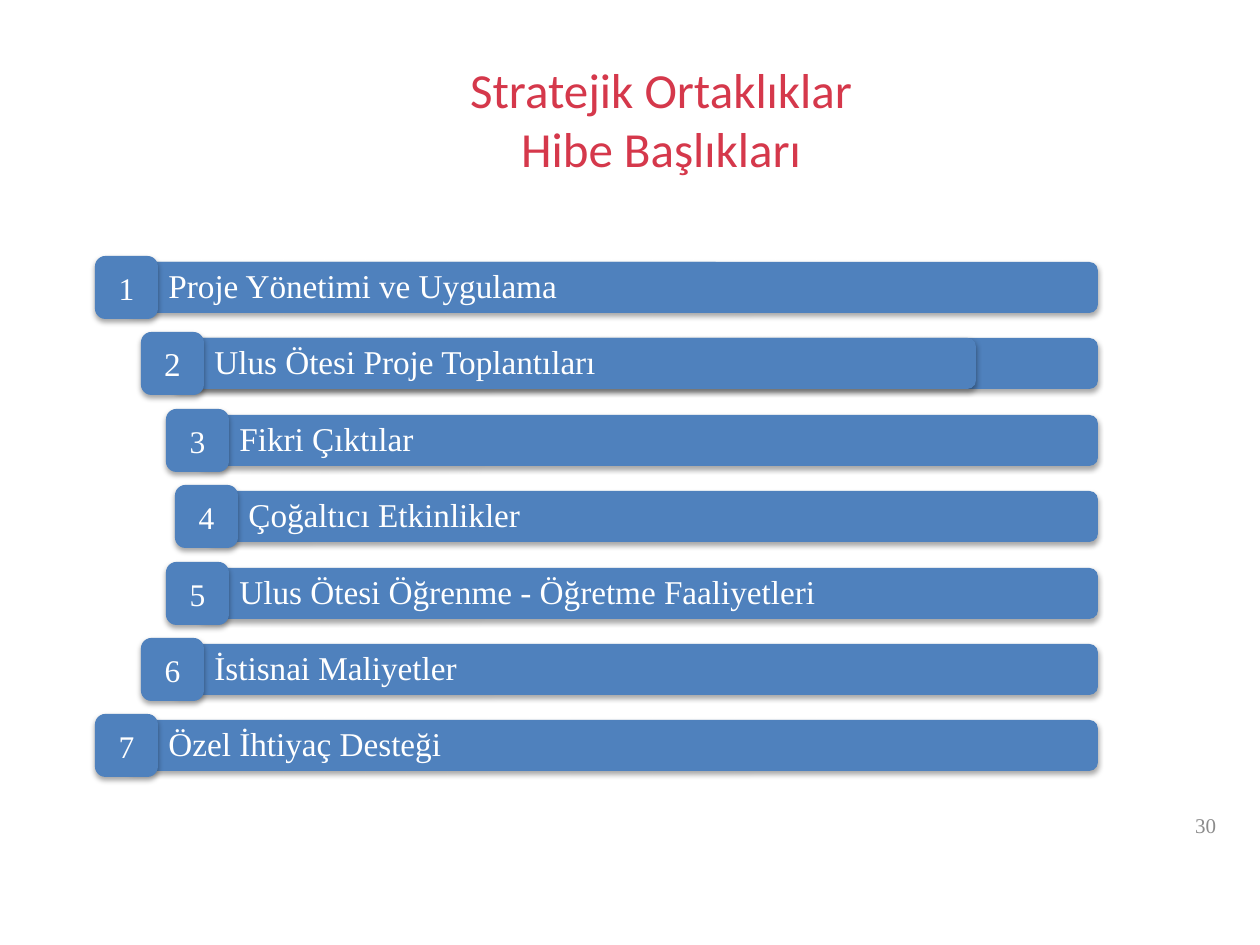
from lxml import etree
from pptx import Presentation
from pptx.dml.color import RGBColor
from pptx.enum.shapes import MSO_SHAPE
from pptx.enum.text import MSO_ANCHOR, PP_ALIGN
from pptx.oxml.ns import qn
from pptx.util import Pt

ROUND_RECT = MSO_SHAPE.ROUNDED_RECTANGLE
MIDDLE = MSO_ANCHOR.MIDDLE
LEFT, CENTER, RIGHT = PP_ALIGN.LEFT, PP_ALIGN.CENTER, PP_ALIGN.RIGHT

RED = RGBColor(0xD5, 0x38, 0x4B)
BLUE = RGBColor(0x4F, 0x81, 0xBD)
WHITE = RGBColor(0xFF, 0xFF, 0xFF)
GRAY = RGBColor(0x8C, 0x8C, 0x8C)
SERIF, SANS = "Times New Roman", "Calibri"

EMU_PER_PX = 914400 / 126


def px(n):
    return round(n * EMU_PER_PX)


def write(sp, text, size=19, font=SERIF, color=WHITE, align=LEFT,
          insets=(12, 6, 12, 6), spacing=None):
    tf = sp.text_frame
    tf.word_wrap = True
    tf.vertical_anchor = MIDDLE
    tf.margin_left, tf.margin_top, tf.margin_right, tf.margin_bottom = map(px, insets)
    tf.text = text
    p = tf.paragraphs[0]
    p.alignment = align
    p.line_spacing = spacing
    for r in p.runs:
        r.font.size = Pt(size)
        r.font.name = font
        r.font.color.rgb = color


class Deck:
    def __init__(self, prs):
        self.s = prs.slides.add_slide(prs.slide_layouts[5])

    def title(self, text, x, y, w, h):
        sp = self.s.shapes.title
        sp.left, sp.top, sp.width, sp.height = map(px, (x, y, w, h))
        write(sp, text, size=28, font=SANS, color=RED, align=CENTER)

    def text(self, text, x, y, w, h, **fmt):
        write(self.s.shapes.add_textbox(*map(px, (x, y, w, h))), text, **fmt)

    def box(self, x, y, w, h, shadow=True):
        sp = self.s.shapes.add_shape(ROUND_RECT, *map(px, (x, y, w, h)))
        sp.fill.solid()
        sp.fill.fore_color.rgb = BLUE
        sp.line.fill.background()
        sp.shadow.inherit = False
        if shadow:
            effects = sp._element.spPr.find(qn("a:effectLst"))
            outer = etree.SubElement(effects, qn("a:outerShdw"), blurRad="39370",
                                     dist="22860", dir="5400000", rotWithShape="0")
            black = etree.SubElement(outer, qn("a:srgbClr"), val="000000")
            etree.SubElement(black, qn("a:alpha"), val="35000")
        return sp

    def bar(self, text, x, y, w, h, shadow=True):
        write(self.box(x, y, w, h, shadow), text, insets=(40, 6, 6, 6), spacing=0.9)

    def badge(self, number, x, y, side, size):
        write(self.box(x, y, side, side), str(number), size=size, align=CENTER,
              insets=(0, 0, 0, 0))


# Bar geometry: left edges follow an arc, right edges align
TOP, PITCH, RIGHT_EDGE = 256, 76.4, 1098
BAR_H, BADGE = 51, 63
ARC = [126, 172, 197, 206, 197, 172, 126]
LABELS = [
    "Proje Yönetimi ve Uygulama",
    "Ulus Ötesi Proje Toplantıları",
    "Fikri Çıktılar",
    "Çoğaltıcı Etkinlikler",
    "Ulus Ötesi Öğrenme - Öğretme Faaliyetleri",
    "İstisnai Maliyetler",
    "Özel İhtiyaç Desteği",
]
# Rows whose label sits on a shorter bar: (width, shadow)
SHORT_BARS = {1: (598, False), 2: (804, True)}


def main():
    prs = Presentation()
    prs.slide_width, prs.slide_height = px(1260), px(945)
    deck = Deck(prs)

    # Title and page number
    deck.title("Stratejik Ortaklıklar\vHibe Başlıkları", 94, 55, 1134, 126)
    deck.text("30", 935, 800, 293, 50, size=12, color=GRAY, align=RIGHT)

    # Numbered bars
    for n, (x, label) in enumerate(zip(ARC, LABELS), start=1):
        y = round(TOP + (n - 1) * PITCH)
        width, shadow = RIGHT_EDGE - x, True
        if n in SHORT_BARS:
            deck.box(x, y + 6, width, BAR_H)
            width, shadow = SHORT_BARS[n]
        deck.bar(label, x, y + 6, width, BAR_H, shadow)
        deck.badge(n, x - BADGE // 2, y, BADGE, size=19 if n == 2 else 18)

    prs.save("out.pptx")


if __name__ == "__main__":
    main()
